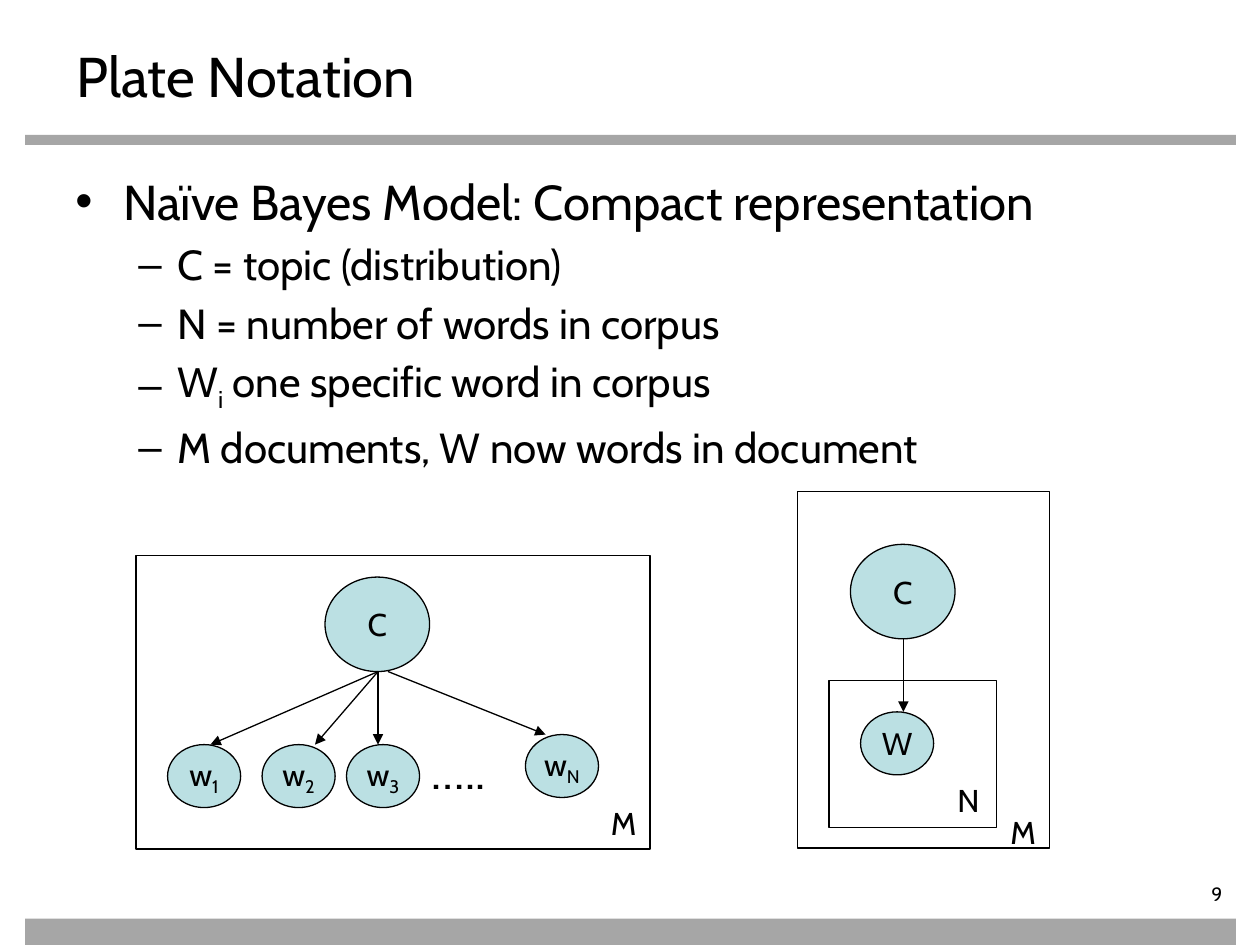
import dataclasses

import lxml.etree
import pptx
import pptx.dml.color
import pptx.enum.shapes
import pptx.enum.text
import pptx.oxml.ns
import pptx.util

Inches = pptx.util.Inches
Pt = pptx.util.Pt
ALIGN = pptx.enum.text.PP_ALIGN
ANCHOR = pptx.enum.text.MSO_ANCHOR
SHAPE = pptx.enum.shapes.MSO_SHAPE
qn = pptx.oxml.ns.qn


@dataclasses.dataclass(frozen=True)
class Theme:
    font: str = "Cabin"
    ink: pptx.dml.color.RGBColor = pptx.dml.color.RGBColor(0, 0, 0)
    bar: pptx.dml.color.RGBColor = pptx.dml.color.RGBColor(0xA6, 0xA6, 0xA6)
    node: pptx.dml.color.RGBColor = pptx.dml.color.RGBColor(0xBB, 0xE0, 0xE3)
    title: int = 32
    body: int = 28
    detail: int = 24
    label: int = 18
    number: int = 11
    line: float = 0.75


theme = Theme()


def write(paragraph, text, size, align=ALIGN.LEFT):
    """Fill a paragraph; text between underscores is subscript."""
    paragraph.alignment = align
    paragraph.font.name = theme.font
    paragraph.font.size = Pt(size)
    paragraph.font.color.rgb = theme.ink
    for index, part in enumerate(text.split("_")):
        if part:
            run = paragraph.add_run()
            run.text = part
            if index % 2:
                run.font._element.set("baseline", "-25000")


def add_shape(kind, box, fill=None, outlined=True):
    shape = slide.shapes.add_shape(kind, *map(Inches, box))
    shape.shadow.inherit = False
    if fill is None:
        shape.fill.background()
    else:
        shape.fill.solid()
        shape.fill.fore_color.rgb = fill
    if outlined:
        shape.line.color.rgb = theme.ink
        shape.line.width = Pt(theme.line)
    else:
        shape.line.fill.background()
    return shape


presentation = pptx.Presentation()
presentation.slide_width = Inches(10)
presentation.slide_height = Inches(7.5)
slide = presentation.slides.add_slide(presentation.slide_layouts[6])

# Grey bars under the title and at the foot
for top, height in [(1.07, 0.08), (7.29, 0.21)]:
    add_shape(SHAPE.RECTANGLE, (0.2, top, 9.61, height), theme.bar, outlined=False)

# Title
title = slide.shapes.add_textbox(Inches(0.51), Inches(0.28), Inches(9), Inches(0.55))
title.text_frame.word_wrap = True
write(title.text_frame.paragraphs[0], "Plate Notation", theme.title)

# Bulleted text
body = slide.shapes.add_textbox(Inches(0.5), Inches(1.31), Inches(9), Inches(5.43))
body.text_frame.word_wrap = True
bullets = [
    (0, "Naïve Bayes Model: Compact representation"),
    (1, "C = topic (distribution)"),
    (1, "N = number of words in corpus"),
    (1, "W_i_ one specific word in corpus"),
    (1, "M documents, W now words in document"),
]
levels = [("•", 0.38, 0.38, theme.body), ("–", 0.81, 0.31, theme.detail)]
for index, (level, text) in enumerate(bullets):
    mark, margin, hanging, size = levels[level]
    paragraph = body.text_frame.paragraphs[0] if index == 0 else body.text_frame.add_paragraph()
    paragraph.level = level
    if index:
        paragraph.space_before = Pt(0.2 * size)
    properties = paragraph._p.get_or_add_pPr()
    properties.set("marL", str(Inches(margin)))
    properties.set("indent", str(-Inches(hanging)))
    lxml.etree.SubElement(properties, qn("a:buFont")).set("typeface", "Arial")
    lxml.etree.SubElement(properties, qn("a:buChar")).set("char", mark)
    write(paragraph, text, size)

# Slide number
number = slide.shapes.add_textbox(Inches(8.7), Inches(7), Inches(1.1), Inches(0.22))
frame = number.text_frame
frame.word_wrap = True
frame.margin_left = frame.margin_top = frame.margin_bottom = 0
write(frame.paragraphs[0], "9", theme.number, ALIGN.RIGHT)

# Plates
for plate in [(1.08, 4.41, 4.08, 2.33), (6.33, 3.9, 2, 2.83), (6.58, 5.4, 1.33, 1.17)]:
    add_shape(SHAPE.RECTANGLE, plate)

# Topic and word nodes
topic_size = (0.83, 0.75)
word_size = (0.58, 0.5)
nodes = [
    ("C", 2.58, 4.58, topic_size),
    ("w_1_", 1.33, 5.91, word_size),
    ("w_2_", 2.08, 5.91, word_size),
    ("w_3_", 2.75, 5.91, word_size),
    ("w_N_", 4.17, 5.83, word_size),
    ("C", 6.75, 4.32, topic_size),
    ("W", 6.83, 5.65, word_size),
]
for text, left, top, size in nodes:
    node = add_shape(SHAPE.OVAL, (left, top, *size), theme.node)
    node.text_frame.word_wrap = False
    node.text_frame.vertical_anchor = ANCHOR.MIDDLE
    write(node.text_frame.paragraphs[0], text, theme.label, ALIGN.CENTER)

# Arrows from topic to words
arrows = [
    (3, 5.33, 1.67, 5.91),
    (3, 5.33, 2.5, 5.91),
    (3, 5.33, 3, 5.91),
    (3.08, 5.33, 4.33, 5.83),
    (7.17, 5.07, 7.17, 5.65),
]
for ends in arrows:
    arrow = slide.shapes.add_connector(
        pptx.enum.shapes.MSO_CONNECTOR.STRAIGHT, *map(Inches, ends))
    arrow.line.color.rgb = theme.ink
    arrow.line.width = Pt(theme.line)
    lxml.etree.SubElement(arrow.line._get_or_add_ln(), qn("a:tailEnd")).set("type", "triangle")
    lxml.etree.SubElement(arrow._element.spPr, qn("a:effectLst"))

# Ellipsis and plate labels
labels = [
    ("…..", 3.33, 5.83, 1.25, 0.57, theme.body),
    ("N", 7.5, 6.15, 0.33, 0.4, theme.label),
    ("M", 4.75, 6.33, 0.42, 0.4, theme.label),
    ("M", 7.92, 6.4, 0.42, 0.4, theme.label),
]
for text, left, top, width, height, size in labels:
    label = slide.shapes.add_textbox(*map(Inches, (left, top, width, height)))
    label.text_frame.word_wrap = True
    write(label.text_frame.paragraphs[0], text, size)

presentation.save("out.pptx")
